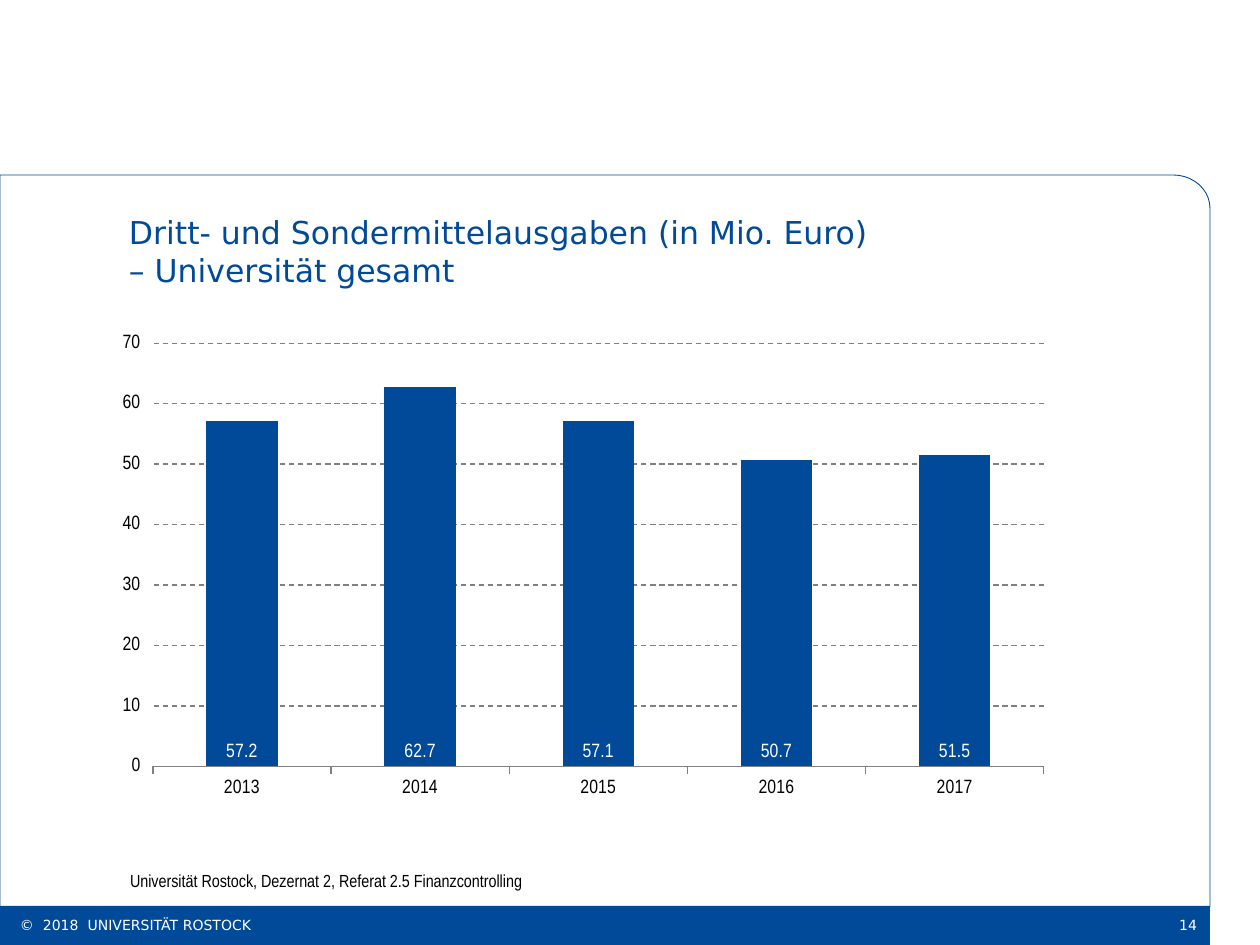
"""Build the slide on third-party and special fund spending."""
import math

from lxml import etree
from pptx import Presentation
from pptx import util as u
from pptx.chart import data as cd
from pptx.dml.color import RGBColor
from pptx.enum import chart as ch, dml, shapes, text
from pptx.oxml import ns

BLUE = RGBColor(0x00, 0x4A, 0x99)
WHITE = RGBColor(0xFF, 0xFF, 0xFF)
BLACK = RGBColor(0x00, 0x00, 0x00)
GRAY = RGBColor(0x80, 0x80, 0x80)
SANS = "DejaVu Sans"
SLIM = "Arial Narrow"
YEARS = ["2013", "2014", "2015", "2016", "2017"]
SPEND = [57.2, 62.7, 57.1, 50.7, 51.5]


def px(num):
    """Turn pixels into EMU."""
    return u.Emu(round(num * 914400 / 126))


def style(font, size, color, name):
    """Set size, colour and face of a font."""
    font.size, font.name = u.Pt(size), name
    font.color.rgb = color


def place(shape, box):
    """Move a shape to left, top, width, height in px."""
    shape.left, shape.top, shape.width, shape.height = map(px, box)


def write(shape, lines, size=8, color=WHITE, name=SANS, left=13,
          align=text.PP_ALIGN.LEFT, anchor=text.MSO_ANCHOR.MIDDLE):
    """Fill a shape with formatted lines."""
    frame = shape.text_frame
    frame.text = "\n".join(lines)
    frame.word_wrap = True
    frame.auto_size = text.MSO_AUTO_SIZE.NONE
    frame.vertical_anchor = anchor
    frame.margin_left, frame.margin_right = px(left), px(13)
    frame.margin_top = frame.margin_bottom = px(6)
    for para in frame.paragraphs:
        para.alignment = align
        para.line_spacing = 1.0
        para.space_before = u.Pt(0)
        style(para.font, size, color, name)


def label(slide, box, line, **form):
    """Add a text box with one line."""
    write(slide.shapes.add_textbox(*map(px, box)), [line], **form)


def band(slide, box):
    """Add the blue footer band."""
    shape = slide.shapes.add_shape(shapes.MSO_SHAPE.RECTANGLE, *map(px, box))
    shape.shadow.inherit = False
    shape.fill.solid()
    shape.fill.fore_color.rgb = BLUE
    shape.line.fill.background()


def border(slide, top, right, base, wide, high, steps=10):
    """Draw the thin outline with its round top right corner."""
    turns = [math.pi / 2 * i / steps for i in range(steps + 1)]
    curve = [(px(right - wide + wide * math.sin(t)),
              px(top + high - high * math.cos(t))) for t in turns]
    build = slide.shapes.build_freeform(0, px(top))
    build.add_line_segments(curve + [(px(right), px(base)), (0, px(base))])
    shape = build.convert_to_shape()
    shape.shadow.inherit = False
    shape.fill.background()
    shape.line.color.rgb = BLUE
    shape.line.width = u.Pt(0.5)


def layout(chart, **parts):
    """Pin the inner plot area to fractions of the chart."""
    plot = chart._chartSpace.chart.plotArea
    for old in plot.findall(ns.qn("c:layout")):
        plot.remove(old)
    root = etree.Element(ns.qn("c:layout"))
    plot.insert(0, root)
    man = etree.SubElement(root, ns.qn("c:manualLayout"))
    modes = {"layoutTarget": "inner", "xMode": "edge", "yMode": "edge"}
    for key, val in {**modes, **parts}.items():
        etree.SubElement(man, ns.qn(f"c:{key}")).set("val", str(val))


def graph(slide, box):
    """Add the column chart of yearly spending."""
    data = cd.CategoryChartData(number_format="0.0")
    data.categories = YEARS
    data.add_series("Series 1", SPEND)
    chart = slide.shapes.add_chart(
        ch.XL_CHART_TYPE.COLUMN_CLUSTERED, *map(px, box), data).chart
    chart.has_legend = chart.has_title = False
    style(chart.font, 10, BLACK, "Arial")
    layout(chart, x=0.05, y=0.04, w=0.93, h=0.88)

    cat, val = chart.category_axis, chart.value_axis
    for axis in (cat, val):
        axis.major_tick_mark = ch.XL_TICK_MARK.OUTSIDE
        style(axis.tick_labels.font, 11, BLACK, SLIM)
    cat.format.line.color.rgb = GRAY
    val.format.line.fill.background()
    val.minimum_scale, val.maximum_scale, val.major_unit = 0, 70, 10
    val.tick_labels.number_format = "0"
    val.tick_labels.number_format_is_linked = False
    grid = val.major_gridlines.format.line
    grid.color.rgb = GRAY
    grid.width = u.Pt(0.75)
    grid.dash_style = dml.MSO_LINE.DASH

    plot = chart.plots[0]
    plot.gap_width, plot.vary_by_categories = 150, False
    bars = plot.series[0]
    bars.format.fill.solid()
    bars.format.fill.fore_color.rgb = BLUE
    tags = bars.data_labels
    tags.show_value = True
    tags.position = ch.XL_LABEL_POSITION.INSIDE_BASE
    style(tags.font, 11, WHITE, SLIM)


def main():
    """Build and save the slide."""
    deck = Presentation()
    deck.slide_width, deck.slide_height = px(1260), px(945)
    slide = deck.slides.add_slide(deck.slide_layouts[5])
    band(slide, (0, 906, 1210, 39))
    border(slide, 175, 1210, 907, 37, 33)
    title = slide.shapes.title
    place(title, (116, 207, 1045, 90))
    write(title, ["Dritt- und Sondermittelausgaben (in Mio. Euro)",
                  "– Universität gesamt"],
          size=18, color=BLUE, anchor=text.MSO_ANCHOR.TOP)
    label(slide, (1113, 905, 97, 40), "14", align=text.PP_ALIGN.RIGHT)
    label(slide, (20, 905, 1068, 40), "©  2018  UNIVERSITÄT ROSTOCK", left=0)
    label(slide, (117, 864, 459, 34),
          "Universität Rostock, Dezernat 2, Referat 2.5 Finanzcontrolling",
          size=10, color=BLACK, name=SLIM, anchor=text.MSO_ANCHOR.TOP)
    graph(slide, (105, 324, 958, 481))
    deck.save("out.pptx")


if __name__ == "__main__":
    main()
